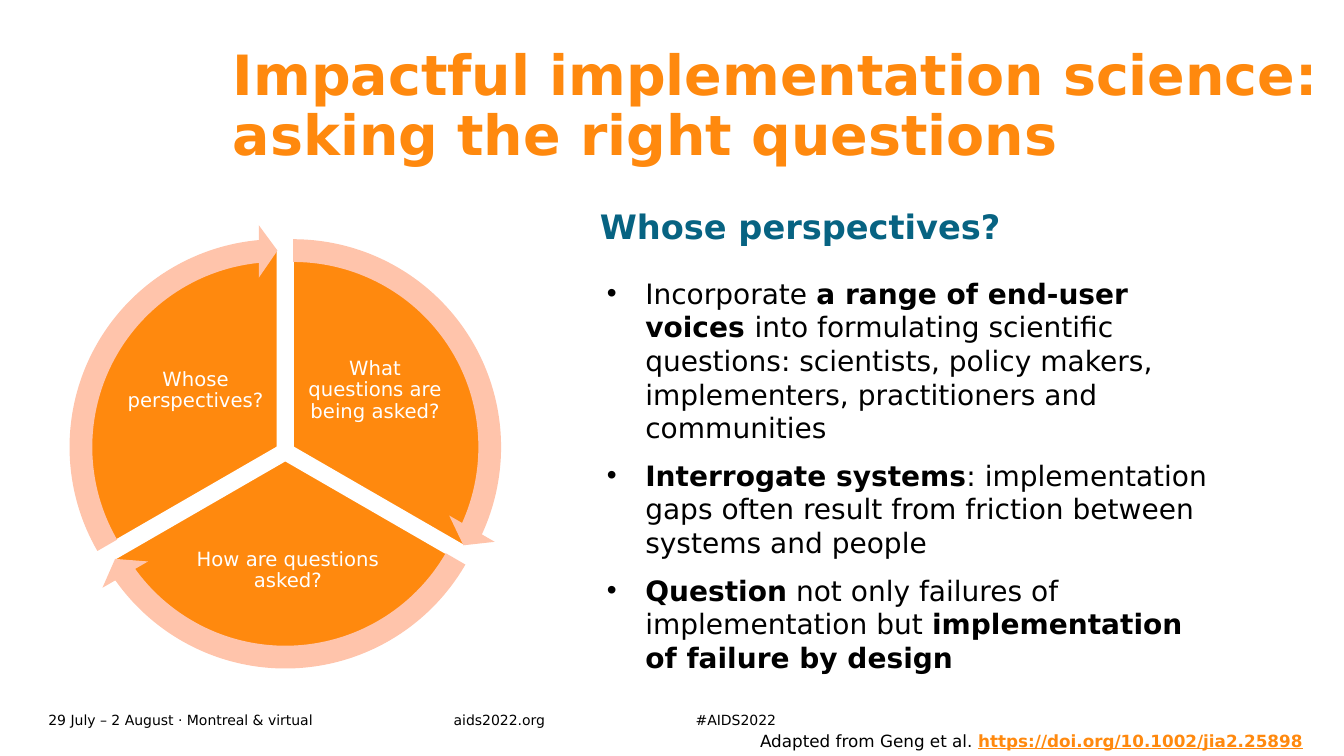
"""Builds the slide on asking the right questions in implementation science."""
from math import cos, radians, sin

from lxml.etree import SubElement
from pptx import Presentation
from pptx.dml.color import RGBColor
from pptx.enum.shapes import MSO_SHAPE as SHAPE
from pptx.enum.text import MSO_ANCHOR as ANCHOR, PP_ALIGN as ALIGN
from pptx.oxml.ns import qn
from pptx.util import Inches, Pt

FONT = "DejaVu Sans"
ORANGE, PEACH, TEAL, BLACK, WHITE = "FF890E", "FFC4AB", "076382", "000000", "FFFFFF"

TITLE = "Impactful implementation science: asking the right questions"
HEADING = "Whose perspectives?"
POINTS = [
    [("Incorporate ", False), ("a range of end-user voices ", True),
     ("into formulating scientific questions: scientists, policy makers, "
      "implementers, practitioners and communities", False)],
    [("Interrogate systems", True),
     (": implementation gaps often result from friction between systems and people", False)],
    [("Question", True), (" not only failures of implementation but ", False),
     ("implementation of failure by design", True)],
]
FOOTER = [
    ("29 July – 2 August · Montreal & virtual", 0.48, 4.02),
    ("aids2022.org", 4.5, 1.93),
    ("#AIDS2022", 6.9, 1.93),
]
CREDIT, CREDIT_LINK = "Adapted from Geng et al. ", "https://doi.org/10.1002/jia2.25898"

CYCLE = [
    ("What questions are being asked?", (3.02, 3.29, 1.4, 1.17)),
    ("How are questions asked?", (1.8, 5.15, 2.11, 1.03)),
    ("Whose perspectives?", (1.24, 3.29, 1.4, 1.17)),
]
HUB_X, HUB_Y, SPREAD = 2.83, 4.48, 0.09
WEDGE_SIZE, ARROW_SIZE = 3.93, 4.42
ARROW_BAND, ARROW_HEAD, ARROW_FLARE = 0.051, 3.275, 0.059
ANGLE_UNIT = 0.6


def color(hex_code):
    return RGBColor.from_string(hex_code)


def add_bullet(paragraph, indent=0.38):
    props = paragraph._p.get_or_add_pPr()
    props.set("marL", str(Inches(indent)))
    props.set("indent", str(-Inches(indent)))
    SubElement(props, qn("a:buFont")).set("typeface", "Arial")
    SubElement(props, qn("a:buChar")).set("char", "•")


def add_text(slide, paragraphs, at, size, ink=BLACK, bold=False, anchor=ANCHOR.TOP,
             align=ALIGN.LEFT, spacing=None, before=0, inset=0, bullets=False, wrap=True):
    if isinstance(paragraphs, str):
        paragraphs = [[(paragraphs, bold)]]
    frame = slide.shapes.add_textbox(*map(Inches, at)).text_frame
    frame.word_wrap, frame.vertical_anchor = wrap, anchor
    frame.margin_left = frame.margin_right = Inches(inset)
    frame.margin_top = frame.margin_bottom = Inches(inset / 2 if not wrap else inset)
    for index, pieces in enumerate(paragraphs):
        paragraph = frame.add_paragraph() if index else frame.paragraphs[0]
        if index and before:
            paragraph.space_before = Pt(before)
        if spacing:
            paragraph.line_spacing = spacing
        paragraph.alignment = align
        if bullets:
            add_bullet(paragraph)
        for words, strong in pieces:
            run = paragraph.add_run()
            run.text = words
            run.font.name, run.font.size, run.font.bold = FONT, Pt(size), strong
            run.font.color.rgb = color(ink)
    return frame


def add_sector(slide, kind, size, middle, adjustments, fill, outline=None):
    left = HUB_X + SPREAD * cos(radians(middle)) - size / 2
    top = HUB_Y + SPREAD * sin(radians(middle)) - size / 2
    sector = slide.shapes.add_shape(kind, *map(Inches, (left, top, size, size)))
    sector.shadow.inherit = False
    for index, value in enumerate(adjustments):
        sector.adjustments[index] = value
    sector.fill.solid()
    sector.fill.fore_color.rgb = color(fill)
    if outline:
        sector.line.color.rgb = color(outline)
        sector.line.width = Pt(1)
    else:
        sector.line.fill.background()


def add_cycle(slide):
    sweep = 360 / len(CYCLE)
    arrows = []
    for index, (question, label_at) in enumerate(CYCLE):
        first = 270 + index * sweep
        start, end = (angle % 360 * ANGLE_UNIT for angle in (first, first + sweep))
        middle = first + sweep / 2
        add_sector(slide, SHAPE.PIE, WEDGE_SIZE, middle, (start, end), ORANGE, WHITE)
        add_text(slide, question, label_at, 14, ink=WHITE, anchor=ANCHOR.MIDDLE,
                 align=ALIGN.CENTER, spacing=0.9, inset=0.02)
        arrows.append((middle, (ARROW_BAND, ARROW_HEAD, end - ARROW_HEAD, start, ARROW_FLARE)))
    for middle, adjustments in arrows:
        add_sector(slide, SHAPE.CIRCULAR_ARROW, ARROW_SIZE, middle, adjustments, PEACH)


def main():
    deck = Presentation()
    deck.slide_width, deck.slide_height = Inches(13.33), Inches(7.5)
    slide = deck.slides.add_slide(deck.slide_layouts[6])

    for words, left, width in FOOTER:
        add_text(slide, words, (left, 7.02, width, 0.24), 10, anchor=ANCHOR.MIDDLE)
    add_text(slide, POINTS, (6.02, 2.74, 6.09, 3.56), 20, before=10, bullets=True)
    add_text(slide, HEADING, (5.95, 2.06, 5.95, 0.39), 24, ink=TEAL, bold=True,
             anchor=ANCHOR.BOTTOM, spacing=0.9)
    add_text(slide, TITLE, (2.31, 0.32, 11.03, 1.49), 39.6, ink=ORANGE, bold=True,
             anchor=ANCHOR.MIDDLE, spacing=0.9)
    add_cycle(slide)

    credit = add_text(slide, [[(CREDIT, False), (CREDIT_LINK, True)]],
                      (7.44, 7.2, 5.9, 0.3), 12, inset=0.1, wrap=False)
    link = credit.paragraphs[0].runs[1].font
    link.underline = True
    link.color.rgb = color(ORANGE)

    deck.save("out.pptx")


if __name__ == "__main__":
    main()
